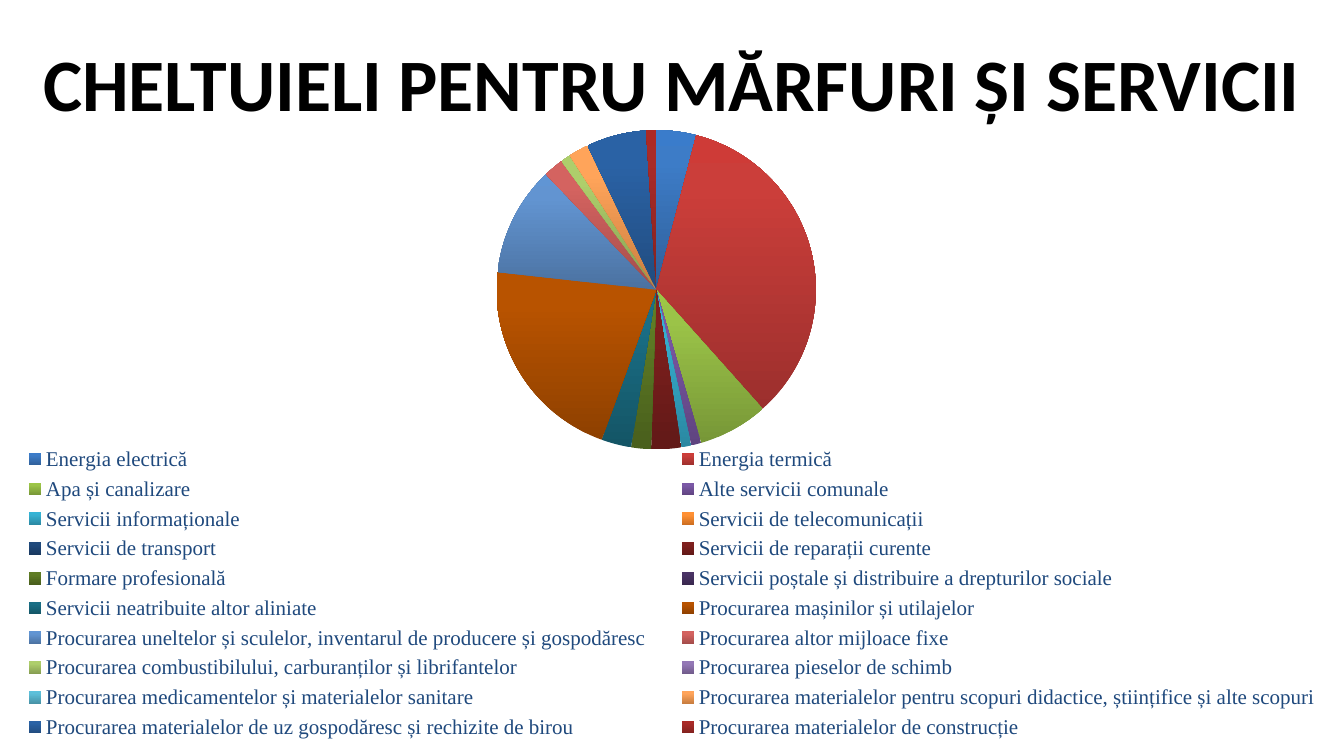
from copy import deepcopy
from dataclasses import dataclass

from pptx import Presentation
from pptx import util as u
from pptx.chart.data import CategoryChartData
from pptx.dml.color import RGBColor
from pptx.enum import chart as charts, text
from pptx.oxml import parse_xml
from pptx.oxml.ns import nsdecls

EMU_PER_PX = 9525


def px(length):
    return u.Emu(length * EMU_PER_PX)


def set_format(target, values):
    for name, value in values.items():
        setattr(target, name, value)


@dataclass
class Theme:
    paper: str = "FFFFFF"
    ink: str = "000000"
    legend_ink: str = "1F497D"
    heading_font: str = "Calibri"
    legend_font: str = "Times New Roman"
    heading_size: float = 52.8
    chart_size: int = 10
    legend_size: int = 15


# Expense, share in percent, gradient colours from bottom to top
EXPENSES = [
    ("Energia electrică", 4, "2F5F99 3D7CC7 3A7CCB"),
    ("Energia termică", 34, "9C2F2D CB3E3A CE3B37"),
    ("Apa și canalizare", 7, "779737 9BC348 9DC746"),
    ("Alte servicii comunale", 1, "5F4480 7B58A6 7C57A8"),
    ("Servicii informaționale", 1, "2A88A2 37B1D2 34B4D6"),
    ("Servicii de telecomunicații", 0, "CC6E20 FF9034 FF9136"),
    ("Servicii de transport", 0, "19395F 204A7C 1E4A7E"),
    ("Servicii de reparații curente", 3, "621917 7F201E 811F1C"),
    ("Formare profesională", 2, "495F1C 5F7C25 607E23"),
    ("Servicii poștale și distribuire a drepturilor sociale", 0,
     "39284E 4A3365 4A3366"),
    ("Servicii neatribuite altor aliniate", 3, "145566 1A6E85 187088"),
    ("Procurarea mașinilor și utilajelor", 21, "8E4000 B85300 B95400"),
    ("Procurarea uneltelor și sculelor, inventarul de producere și gospodăresc",
     11, "4B72A1 6294D1 6095D4"),
    ("Procurarea altor mijloace fixe", 2, "A34C4A D46360 D7615E"),
    ("Procurarea combustibilului, carburanților și librifantelor", 1,
     "869E52 AECE6B AFD16A"),
    ("Procurarea pieselor de schimb", 0, "725C8C 9478B6 9577B8"),
    ("Procurarea medicamentelor și materialelor sanitare", 0,
     "4893A7 5DBFD9 5BC1DD"),
    ("Procurarea materialelor pentru scopuri didactice, științifice și alte scopuri",
     2, "C97E40 FFA45A FFA55B"),
    ("Procurarea materialelor de uz gospodăresc și rechizite de birou", 6,
     "214C7F 2A62A5 2863A8"),
    ("Procurarea materialelor de construcție", 1, "82211E A92B28 AC2925"),
]
GRADIENT_POSITIONS = (0, 0.8, 1)


class ExpenseSlide:
    def __init__(self, deck, theme):
        self.theme = theme
        self.slide = deck.slides.add_slide(deck.slide_layouts[5])

    def style_font(self, font, name, size, color, bold=False):
        set_format(font, {"name": name, "size": u.Pt(size), "bold": bold})
        font.color.rgb = RGBColor.from_string(color)

    def title(self, wording, left, top, width, height):
        heading = self.slide.shapes.title
        set_format(heading, {"left": px(left), "top": px(top),
                             "width": px(width), "height": px(height)})
        heading.fill.solid()
        heading.fill.fore_color.rgb = RGBColor.from_string(self.theme.paper)
        frame = heading.text_frame
        frame.text = wording
        set_format(frame, {"auto_size": text.MSO_AUTO_SIZE.NONE, "word_wrap": True,
                           "vertical_anchor": text.MSO_ANCHOR.MIDDLE})
        paragraph = frame.paragraphs[0]
        paragraph.alignment = text.PP_ALIGN.CENTER
        self.style_font(paragraph.runs[0].font, self.theme.heading_font,
                        self.theme.heading_size, self.theme.ink, True)

    def pie(self, expenses, left, top, width, height, plot_box, legend_box):
        names, shares, gradients = zip(*expenses)
        data = CategoryChartData()
        data.categories = names
        data.add_series("Series 1", shares)
        chart = self.slide.shapes.add_chart(
            charts.XL_CHART_TYPE.PIE, px(left), px(top), px(width), px(height),
            data).chart
        chart.has_title = False
        self.style_font(chart.font, self.theme.heading_font,
                        self.theme.chart_size, self.theme.ink)

        # Legend
        chart.has_legend = True
        set_format(chart.legend, {"position": charts.XL_LEGEND_POSITION.BOTTOM,
                                  "include_in_layout": False})
        self.style_font(chart.legend.font, self.theme.legend_font,
                        self.theme.legend_size, self.theme.legend_ink)

        # Slices
        plot = chart.plots[0]
        plot.vary_by_categories = True
        for index, colors in enumerate(gradients):
            self.gradient(plot.series[0].points[index].format.fill, colors.split())

        # Places of the pie and the legend inside the chart
        size = (width, height)
        plot_area = chart.element.find(".//{*}plotArea")
        legend = chart.element.find(".//{*}legend")
        self.place(plot_area, 0, plot_box, size, '<c:layoutTarget val="inner"/>')
        self.place(legend, 1, legend_box, size)

    def gradient(self, fill, colors):
        fill.gradient()
        fill.gradient_angle = 90
        last = fill.gradient_stops[1]._gs
        last.addnext(deepcopy(last))
        for stop, position, color in zip(fill.gradient_stops, GRADIENT_POSITIONS,
                                         colors):
            stop.position = position
            stop.color.rgb = RGBColor.from_string(color)

    def place(self, part, index, box, size, target=""):
        for layout in part.findall("{*}layout"):
            part.remove(layout)
        modes = "".join(f'<c:{axis}Mode val="edge"/>' for axis in "xy")
        sizes = "".join(f'<c:{side} val="{length / whole:.4f}"/>'
                        for side, length, whole in zip("xywh", box, size * 2))
        part.insert(index, parse_xml(
            f'<c:layout {nsdecls("c")}><c:manualLayout>'
            f'{target}{modes}{sizes}</c:manualLayout></c:layout>'))


def main():
    deck = Presentation()
    set_format(deck, {"slide_width": px(1280), "slide_height": px(720)})
    page = ExpenseSlide(deck, Theme())
    page.title("CHELTUIELI PENTRU MĂRFURI ȘI SERVICII", 0, 18, 1280, 120)
    page.pie(EXPENSES, 0, 108, 1280, 612, plot_box=(0, 16, 1250, 304),
             legend_box=(0, 312, 1280, 290))
    deck.save("out.pptx")


if __name__ == "__main__":
    main()
